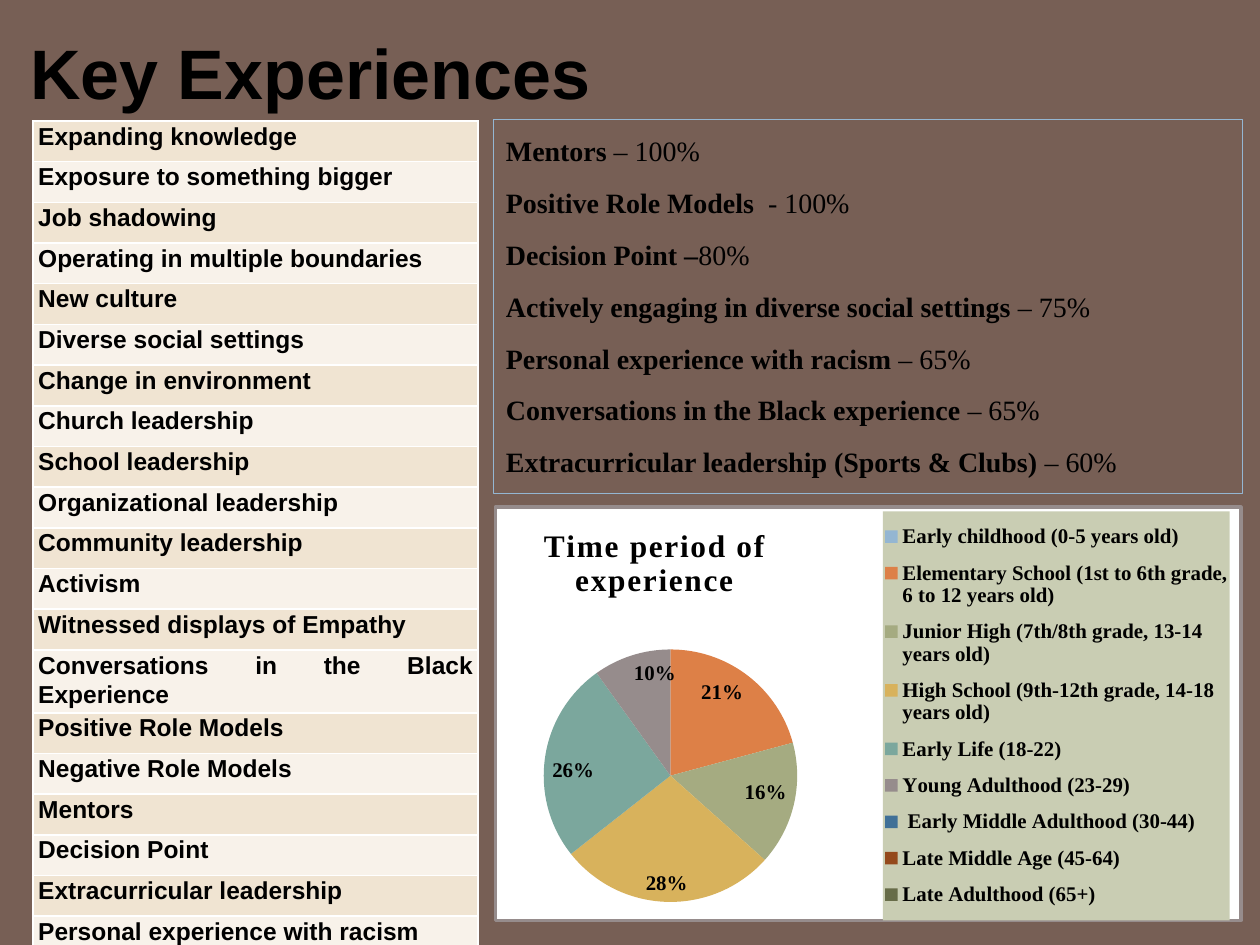
from lxml import etree
from pptx import Presentation
from pptx.chart.data import CategoryChartData
from pptx.dml.color import RGBColor
from pptx.enum.chart import XL_CHART_TYPE, XL_LABEL_POSITION, XL_LEGEND_POSITION
from pptx.enum.shapes import MSO_SHAPE
from pptx.enum.text import MSO_ANCHOR, PP_ALIGN
from pptx.oxml import parse_xml
from pptx.oxml.ns import nsdecls, qn
from pptx.util import Cm, Pt

BLACK = RGBColor(0x00, 0x00, 0x00)
WHITE = RGBColor(0xFF, 0xFF, 0xFF)
BROWN = RGBColor(0x77, 0x5F, 0x55)
BLUE = RGBColor(0x94, 0xB6, 0xD2)
GREY = RGBColor(0x96, 0x8C, 0x8C)
SAGE = RGBColor(0xC9, 0xCD, 0xB3)
BANDS = [RGBColor(0xF0, 0xE4, 0xD2), RGBColor(0xF8, 0xF2, 0xEA)]
SLICES = [BLUE, RGBColor(0xDD, 0x80, 0x47), RGBColor(0xA5, 0xAB, 0x81),
          RGBColor(0xD8, 0xB2, 0x5C), RGBColor(0x7B, 0xA7, 0x9D), GREY,
          RGBColor(0x40, 0x70, 0x97), RGBColor(0x94, 0x49, 0x1B),
          RGBColor(0x67, 0x6C, 0x48)]
SANS, SERIF = "Arial", "Times New Roman"

THEMES = [
    "Expanding knowledge", "Exposure to something bigger", "Job shadowing",
    "Operating in multiple boundaries", "New culture",
    "Diverse social settings", "Change in environment", "Church leadership",
    "School leadership", "Organizational leadership", "Community leadership",
    "Activism", "Witnessed displays of Empathy",
    "Conversations in the Black Experience", "Positive Role Models",
    "Negative Role Models", "Mentors", "Decision Point",
    "Extracurricular leadership", "Personal experience with racism",
]
SHARES = [
    ("Mentors", " – 100%"),
    ("Positive Role Models\u00a0 ", "- 100%"),
    ("Decision Point –", "80%"),
    ("Actively engaging in diverse social settings", " – 75%"),
    ("Personal experience with racism ", "– 65%"),
    ("Conversations in the Black experience ", "– 65%"),
    ("Extracurricular leadership (Sports & Clubs)\u00a0", "– 60%"),
]
PERIODS = [
    ("Early childhood (0-5 years old)", 0),
    ("Elementary School (1st to 6th grade, 6 to 12 years old)", 21),
    ("Junior High (7th/8th grade, 13-14 years old)", 16),
    ("High School (9th-12th grade, 14-18 years old)", 28),
    ("Early Life (18-22)", 26),
    ("Young Adulthood (23-29)", 10),
    (" Early Middle Adulthood (30-44)", 0),
    ("Late Middle Age (45-64)", 0),
    ("Late Adulthood (65+)", 0),
]


def style(font, name, size, bold=True):
    font.name, font.size, font.bold = name, Pt(size), bold
    font.color.rgb = BLACK


def add_title(slide, box):
    frame = slide.shapes.add_textbox(*box).text_frame
    frame.word_wrap = True
    frame.vertical_anchor = MSO_ANCHOR.BOTTOM
    frame.text = "Key Experiences"
    para = frame.paragraphs[0]
    para.line_spacing = 0.8
    style(para.runs[0].font, SANS, 40)


def add_themes(slide, box):
    table = slide.shapes.add_table(len(THEMES), 1, *box).table
    table.first_row = False
    for i, theme in enumerate(THEMES):
        table.rows[i].height = Cm(0.82)
        cell = table.cell(i, 0)
        cell.fill.solid()
        cell.fill.fore_color.rgb = BANDS[i % 2]
        cell.margin_left = cell.margin_right = Cm(0.1)
        cell.margin_top = cell.margin_bottom = 0
        cell.text_frame.text = theme
        para = cell.text_frame.paragraphs[0]
        para.alignment = PP_ALIGN.JUSTIFY
        para.line_spacing = 1.07
        style(para.runs[0].font, SANS, 14)
    table.rows[len(THEMES) - 1].height = Cm(0.64)


def add_shares(slide, box):
    panel = slide.shapes.add_shape(MSO_SHAPE.RECTANGLE, *box)
    panel.shadow.inherit = False
    panel.fill.background()
    panel.line.color.rgb = BLUE
    panel.line.width = Pt(0.75)
    frame = panel.text_frame
    frame.word_wrap = True
    frame.vertical_anchor = MSO_ANCHOR.TOP
    frame.margin_top = Cm(0.29)
    for i, parts in enumerate(SHARES):
        para = frame.paragraphs[0] if i == 0 else frame.add_paragraph()
        para.alignment = PP_ALIGN.LEFT
        if i:
            para.space_before = Pt(10.4)
        for text, bold in zip(parts, (True, False)):
            run = para.add_run()
            run.text = text
            style(run.font, SERIF, 16, bold)


def place(part, x, y, w=None, h=None):
    """Fix a chart part at fractions of the chart's area."""
    for old in part.findall(qn("c:layout")):
        part.remove(old)
    inner = '<c:layoutTarget val="inner"/>' if part.tag == qn("c:plotArea") else ""
    sizes = [("x", x), ("y", y), ("w", w), ("h", h)]
    modes = '<c:xMode val="edge"/><c:yMode val="edge"/>'
    vals = "".join(f'<c:{k} val="{v}"/>' for k, v in sizes if v is not None)
    layout = parse_xml(f'<c:layout {nsdecls("c")}><c:manualLayout>'
                       f'{inner}{modes}{vals}</c:manualLayout></c:layout>')
    before = [k for k in part if k.tag in (qn("c:tx"), qn("c:legendPos"))]
    part.insert(len(before), layout)


def paint(part, fill, line=None):
    """Add fill and outline to a chart part, ahead of its text properties."""
    edge = (f'<a:ln w="{Pt(2)}"><a:solidFill><a:srgbClr val="{line}"/>'
            '</a:solidFill></a:ln>' if line else "")
    props = parse_xml(f'<c:spPr {nsdecls("c", "a")}><a:solidFill>'
                      f'<a:srgbClr val="{fill}"/></a:solidFill>{edge}</c:spPr>')
    part.find(qn("c:txPr")).addprevious(props)


def add_periods(slide, box):
    data = CategoryChartData()
    data.categories = [name for name, _ in PERIODS]
    data.add_series("Series 1", [value for _, value in PERIODS])
    chart = slide.shapes.add_chart(XL_CHART_TYPE.PIE, *box, data).chart
    style(chart.font, SERIF, 10, False)

    chart.has_title = True
    frame = chart.chart_title.text_frame
    frame.text = "Time period of\nexperience"
    for para in frame.paragraphs:
        style(para.runs[0].font, SERIF, 18)
        para.runs[0].font._element.set("spc", "100")
    chart.chart_title.include_in_layout = False

    chart.has_legend = True
    legend = chart.legend
    legend.position = XL_LEGEND_POSITION.RIGHT
    legend.include_in_layout = False
    style(legend.font, SERIF, 12)

    plot = chart.plots[0]
    plot.vary_by_categories = True
    series = plot.series[0]
    for i, color in enumerate(SLICES):
        fill = series.points[i].format.fill
        fill.solid()
        fill.fore_color.rgb = color
    labels = series.data_labels
    labels.show_percentage = True
    labels.show_value = False
    labels.number_format, labels.number_format_is_linked = "0%", False
    labels.position = XL_LABEL_POSITION.INSIDE_END
    style(labels.font, SERIF, 12)
    empty = [i for i, (_, value) in enumerate(PERIODS) if not value]
    for spot, i in enumerate(empty):
        label = etree.Element(qn("c:dLbl"))
        etree.SubElement(label, qn("c:idx")).set("val", str(i))
        etree.SubElement(label, qn("c:delete")).set("val", "1")
        labels._element.insert(spot, label)

    root = chart._chartSpace
    paint(root, WHITE, GREY)
    paint(legend._element, SAGE)
    place(chart.chart_title._element, 0.06, 0.04)
    place(root.chart.plotArea, 0.065, 0.34, 0.34, 0.62)
    place(legend._element, 0.52, 0.01, 0.465, 0.99)


def main():
    deck = Presentation()
    deck.slide_width, deck.slide_height = Cm(25.4), Cm(19.05)
    slide = deck.slides.add_slide(deck.slide_layouts[6])
    slide.background.fill.solid()
    slide.background.fill.fore_color.rgb = BROWN
    add_title(slide, (Cm(0.36), Cm(0.2), Cm(21.8), Cm(2.21)))
    add_themes(slide, (Cm(0.67), Cm(2.44), Cm(8.97), Cm(16.15)))
    add_shares(slide, (Cm(9.95), Cm(2.41), Cm(15.1), Cm(7.54)))
    add_periods(slide, (Cm(9.95), Cm(10.19), Cm(15.1), Cm(8.4)))
    deck.save("out.pptx")


if __name__ == "__main__":
    main()
